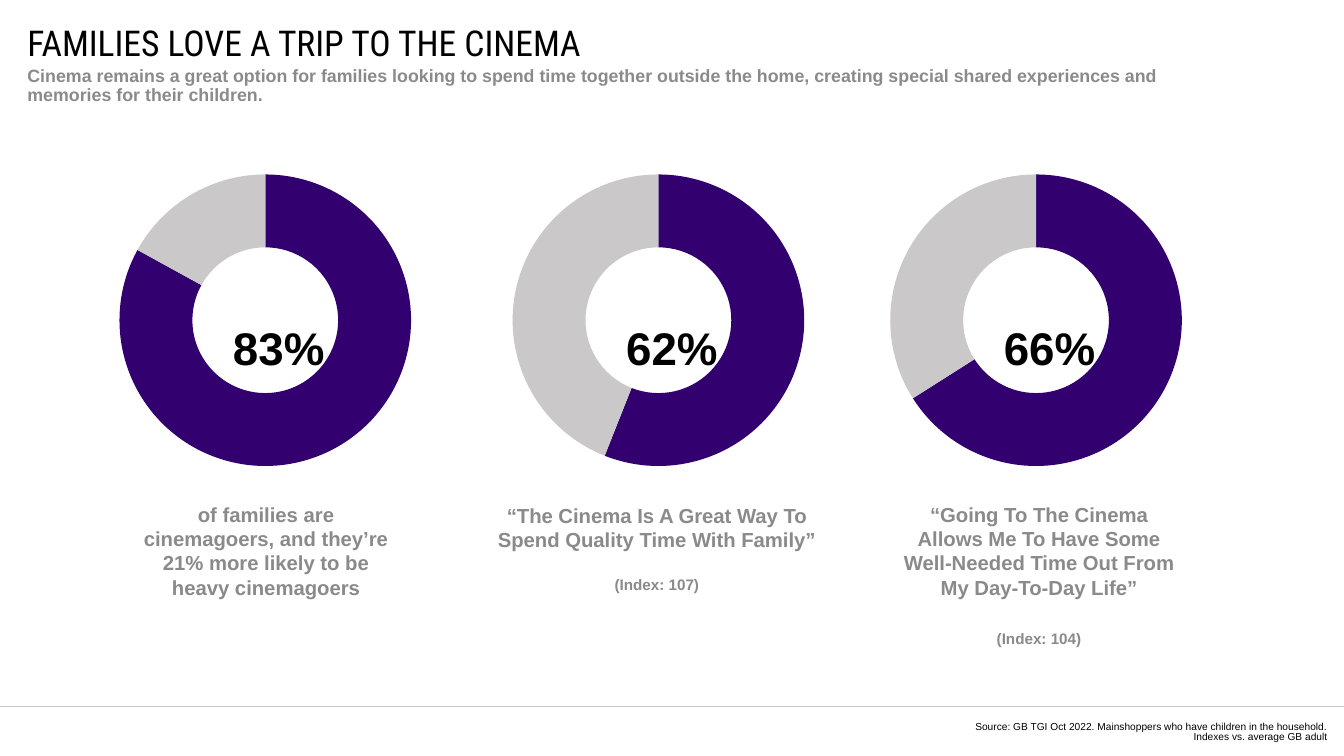
from lxml import etree
from pptx import Presentation
from pptx.chart.data import CategoryChartData
from pptx.dml.color import RGBColor
from pptx.enum.chart import XL_CHART_TYPE
from pptx.enum.shapes import MSO_CONNECTOR
from pptx.enum.text import MSO_ANCHOR, MSO_AUTO_SIZE, PP_ALIGN
from pptx.oxml.ns import qn
from pptx.util import Inches, Pt

DOUGHNUT = XL_CHART_TYPE.DOUGHNUT
STRAIGHT = MSO_CONNECTOR.STRAIGHT
TOP, MIDDLE = MSO_ANCHOR.TOP, MSO_ANCHOR.MIDDLE
NO_AUTOFIT = MSO_AUTO_SIZE.NONE
LEFT, CENTER, RIGHT = PP_ALIGN.LEFT, PP_ALIGN.CENTER, PP_ALIGN.RIGHT

BLACK = RGBColor(0x00, 0x00, 0x00)
GREY = RGBColor(0x8A, 0x8A, 0x8D)
PALE_GREY = RGBColor(0xCA, 0xC8, 0xC8)
PURPLE = RGBColor(0x33, 0x00, 0x6F)

SLIDE_WIDTH, SLIDE_HEIGHT = 14.7, 8.27
CHART_TOP, CHART_WIDTH, CHART_HEIGHT = 1.45, 5.38, 4.44
CAPTION_TOP = 5.45

FINDINGS = [
    dict(chart_left=0.36, percent="83%", share=83, caption_box=(1.41, 3, 1.95),
         quote="of families are cinemagoers, and they’re 21% more likely to be heavy cinemagoers",
         spacing=Pt(19)),
    dict(chart_left=4.66, percent="62%", share=56, caption_box=(5.18, 4.01, 0.89),
         quote="“The Cinema Is A Great Way To Spend Quality Time With Family”",
         index="(Index: 107)"),
    dict(chart_left=8.79, percent="66%", share=66, caption_box=(9.71, 3.31, 1.26),
         quote="“Going To The Cinema Allows Me To Have Some Well-Needed Time Out From My Day-To-Day Life”",
         index="(Index: 104)", spacing=Pt(19)),
]


def write_text(frame, text, size, color=BLACK, font="Arial", bold=False,
               align=LEFT, spacing=None, before=None, append=False):
    paragraph = frame.add_paragraph() if append else frame.paragraphs[0]
    paragraph.alignment = align
    if spacing is not None:
        paragraph.line_spacing = spacing
    if before is not None:
        paragraph.space_before = before
    run = paragraph.add_run()
    run.text = text
    run.font.name = font
    run.font.size = Pt(size)
    run.font.bold = bold
    run.font.color.rgb = color


def prepare_frame(frame, anchor=TOP, inset=True, wrap=True):
    frame.auto_size = NO_AUTOFIT
    frame.word_wrap = wrap
    frame.vertical_anchor = anchor
    if not inset:
        frame.margin_left = frame.margin_right = 0
        frame.margin_top = frame.margin_bottom = 0
    return frame


def add_frame(slide, left, top, width, height, **options):
    box = slide.shapes.add_textbox(Inches(left), Inches(top), Inches(width), Inches(height))
    return prepare_frame(box.text_frame, **options)


def set_layout(parent, position, **settings):
    for old in parent.findall(qn("c:layout")):
        parent.remove(old)
    layout = etree.Element(qn("c:layout"))
    manual = etree.SubElement(layout, qn("c:manualLayout"))
    for name, value in settings.items():
        etree.SubElement(manual, qn("c:" + name)).set("val", str(value))
    parent.insert(position, layout)


def add_header(slide, left, top, width):
    title = slide.shapes.title
    title.left, title.top = Inches(left), Inches(top)
    title.width, title.height = Inches(width), Inches(0.32)
    title_frame = prepare_frame(title.text_frame, anchor=MIDDLE, inset=False, wrap=False)
    write_text(title_frame, "FAMILIES LOVE A TRIP TO THE CINEMA", 28,
               font="Roboto Condensed", spacing=1.0, before=Pt(0))
    summary = add_frame(slide, left, top + 0.43, width - 0.55, 0.48, inset=False)
    write_text(summary, "Cinema remains a great option for families looking to spend time "
               "together outside the home, creating special shared experiences and "
               "memories for their children.", 14, color=GREY, bold=True, spacing=Pt(15))


def add_share_chart(slide, left, top, width, height, percent, share):
    data = CategoryChartData()
    data.categories = ["1", "2"]
    data.add_series("Series 1", (share, 100 - share))
    chart = slide.shapes.add_chart(DOUGHNUT, Inches(left), Inches(top),
                                   Inches(width), Inches(height), data).chart
    chart.has_legend = False
    chart.font.name = "Arial"
    chart.font.size = Pt(10)
    chart.font.color.rgb = BLACK
    chart.has_title = True
    write_text(chart.chart_title.text_frame, percent, 36, bold=True, align=CENTER)
    chart.chart_title.include_in_layout = True
    plot = chart.plots[0]
    plot.vary_by_categories = True
    for number, color in enumerate((PURPLE, PALE_GREY)):
        segment = plot.series[0].points[number].format
        segment.fill.solid()
        segment.fill.fore_color.rgb = color
        segment.line.fill.background()
    chart_xml = chart.element
    chart_xml.find(".//" + qn("c:holeSize")).set("val", "75")
    set_layout(chart_xml.find(".//" + qn("c:title")), 1,
               xMode="edge", yMode="edge", x=0.39, y=0.44)
    set_layout(chart_xml.find(".//" + qn("c:plotArea")), 0, layoutTarget="inner",
               xMode="edge", yMode="edge", x=0.176, y=0.067, w=0.593, h=0.791)


def add_caption(slide, left, top, width, height, quote, index=None, spacing=None):
    caption = add_frame(slide, left, top, width, height)
    style = dict(color=GREY, bold=True, align=CENTER, spacing=spacing)
    write_text(caption, quote, 16, **style)
    if index:
        write_text(caption, index, 12, before=Pt(19), append=True, **style)


def add_finding(slide, chart_left, percent, share, caption_box, **caption):
    add_share_chart(slide, chart_left, CHART_TOP, CHART_WIDTH, CHART_HEIGHT, percent, share)
    caption_left, caption_width, caption_height = caption_box
    add_caption(slide, caption_left, CAPTION_TOP, caption_width, caption_height, **caption)


def add_footer(slide, top, width):
    rule = slide.shapes.add_connector(STRAIGHT, 0, Inches(top), Inches(width), Inches(top))
    rule.line.color.rgb = PALE_GREY
    rule.line.width = Pt(0.5)
    etree.SubElement(rule._element.spPr, qn("a:effectLst"))
    source = add_frame(slide, width - 4.99, top + 0.17, 4.81, 0.22, anchor=MIDDLE, inset=False)
    style = dict(align=RIGHT, spacing=Pt(8))
    write_text(source, "Source: GB TGI Oct 2022. Mainshoppers who have children in the household.",
               8, **style)
    write_text(source, "Indexes vs. average GB adult", 8, append=True, **style)


def main():
    presentation = Presentation()
    presentation.slide_width = Inches(SLIDE_WIDTH)
    presentation.slide_height = Inches(SLIDE_HEIGHT)
    slide = presentation.slides.add_slide(presentation.slide_layouts[5])
    add_header(slide, 0.3, 0.3, 13.58)
    for finding in FINDINGS:
        add_finding(slide, **finding)
    add_footer(slide, 7.73, SLIDE_WIDTH)
    presentation.save("out.pptx")


if __name__ == "__main__":
    main()
